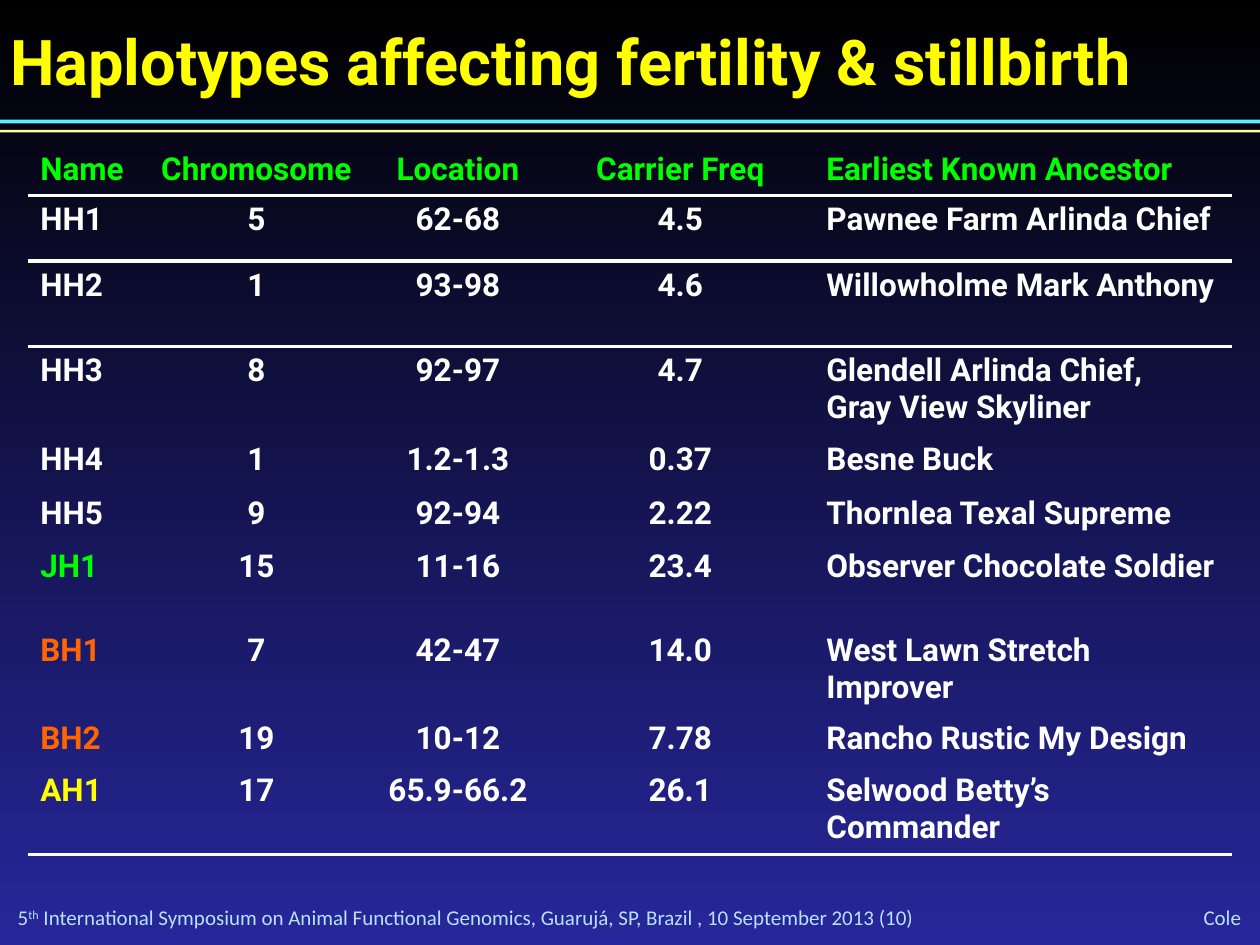
from lxml import etree
from pptx import Presentation
from pptx.dml.color import RGBColor
from pptx.enum import shapes, text
from pptx.oxml.ns import qn
from pptx.util import Inches, Pt

WHITE, GREEN, ORANGE, YELLOW, PALE_BLUE = "FFFFFF", "00FF00", "FF6600", "FFFF00", "B8E2FF"
NO_GRID_STYLE = "{2D5ABB26-0587-4C30-8999-92F81FD0307C}"


def color(hex_string):
    return RGBColor.from_string(hex_string)


def add_run(paragraph, words, size, font, hex_string, bold=False):
    run = paragraph.add_run()
    run.text = words
    run.font.size = Pt(size)
    run.font.name = font
    run.font.bold = bold
    run.font.color.rgb = color(hex_string)
    return run


presentation = Presentation()
presentation.slide_width, presentation.slide_height = Inches(10), Inches(7.5)
slide = presentation.slides.add_slide(presentation.slide_layouts[5])

# Background gradient, black at the top
background = slide.background.fill
background.gradient()
background.gradient_angle = 270
for stop, position, hex_string in zip(background.gradient_stops, (0, 1), ("000000", "27279B")):
    stop.position = position
    stop.color.rgb = color(hex_string)

# Rules under the title
for top, height, hex_string in ((0.95, 0.03, "5BEFFF"), (1.03, 0.02, "FFFF99")):
    rule = slide.shapes.add_shape(
        shapes.MSO_SHAPE.RECTANGLE, 0, Inches(top), Inches(10), Inches(height))
    rule.shadow.inherit = False
    rule.fill.solid()
    rule.fill.fore_color.rgb = color(hex_string)
    rule.line.fill.background()

# Footer: symposium on the left, speaker on the right
symposium = [("5", None), ("th", "30000"),
             (" International Symposium on Animal Functional Genomics, Guarujá, SP, Brazil"
              " , 10 September 2013 (10)", None)]
footers = [(0.14, 7.18, 8.81, 0.2, text.PP_ALIGN.LEFT, symposium),
           (8.72, 7.17, 1.13, 0.21, text.PP_ALIGN.RIGHT, [("Cole", None)])]
for left, top, width, height, alignment, pieces in footers:
    footer = slide.shapes.add_textbox(Inches(left), Inches(top), Inches(width), Inches(height))
    frame = footer.text_frame
    frame.word_wrap = True
    frame.vertical_anchor = text.MSO_ANCHOR.MIDDLE
    frame.margin_left = frame.margin_right = frame.margin_top = frame.margin_bottom = 0
    paragraph = frame.paragraphs[0]
    paragraph.alignment = alignment
    for words, baseline in pieces:
        run = add_run(paragraph, words, 12, "Calibri", PALE_BLUE)
        if baseline:
            run.font._element.set("baseline", baseline)

# Title
title = slide.shapes.title
title.left, title.top, title.width, title.height = map(Inches, (0.08, 0.18, 9.8, 0.61))
frame = title.text_frame
frame.auto_size = text.MSO_AUTO_SIZE.NONE
frame.vertical_anchor = text.MSO_ANCHOR.TOP
frame.margin_left = frame.margin_right = frame.margin_top = frame.margin_bottom = 0
frame.paragraphs[0].alignment = text.PP_ALIGN.LEFT
add_run(frame.paragraphs[0], "Haplotypes affecting fertility & stillbirth", 36, "Roboto", YELLOW, True)

# Haplotype table
rows = [
    ("Name", "Chromosome", "Location", "Carrier Freq", "Earliest Known Ancestor"),
    ("HH1", "5", "62-68", "4.5", "Pawnee Farm Arlinda Chief"),
    ("HH2", "1", "93-98", "4.6", "Willowholme Mark Anthony"),
    ("HH3", "8", "92-97", "4.7", "Glendell Arlinda Chief,\nGray View Skyliner"),
    ("HH4", "1", "1.2-1.3", "0.37", "Besne Buck"),
    ("HH5", "9", "92-94", "2.22", "Thornlea Texal Supreme"),
    ("JH1", "15", "11-16", "23.4", "Observer Chocolate Soldier"),
    ("BH1", "7", "42-47", "14.0", "West Lawn Stretch Improver"),
    ("BH2", "19", "10-12", "7.78", "Rancho Rustic My Design"),
    ("AH1", "17", "65.9-66.2", "26.1", "Selwood Betty’s Commander"),
]
column_widths = (0.92, 1.79, 1.41, 2.12, 3.32)
row_heights = (0.37, 0.52, 0.68, 0.67, 0.43, 0.42, 0.67, 0.68, 0.41, 0.52)
breed_colors = {"H": WHITE, "J": GREEN, "B": ORANGE, "A": YELLOW}
ruled_rows = (0, 1, len(rows) - 1)

table = slide.shapes.add_table(
    len(rows), len(column_widths), Inches(0.22), Inches(1.15),
    Inches(sum(column_widths)), Inches(sum(row_heights))).table
table.first_row = table.horz_banding = False
table._tbl.tblPr.find(qn("a:tableStyleId")).text = NO_GRID_STYLE
for column, width in zip(table.columns, column_widths):
    column.width = Inches(width)

for row_index, (values, height) in enumerate(zip(rows, row_heights)):
    table.rows[row_index].height = Inches(height)
    for column_index, value in enumerate(values):
        cell = table.cell(row_index, column_index)
        # White line below the ruled rows, shared with the row that follows
        edges = [("a:lnT", row_index - 1), ("a:lnB", row_index)]
        for edge, line_row in edges:
            if line_row in ruled_rows:
                border = etree.SubElement(
                    cell._tc.get_or_add_tcPr(), qn(edge), w=str(Pt(2.25)))
                fill = etree.SubElement(border, qn("a:solidFill"))
                etree.SubElement(fill, qn("a:srgbClr"), val=WHITE)
        cell.fill.background()

        if row_index == 0:
            text_color = GREEN
        elif column_index == 0:
            text_color = breed_colors[value[0]]
        else:
            text_color = WHITE
        for line_index, words in enumerate(value.split("\n")):
            frame = cell.text_frame
            paragraph = frame.add_paragraph() if line_index else frame.paragraphs[0]
            if column_index in (1, 2, 3):
                paragraph.alignment = text.PP_ALIGN.CENTER
            add_run(paragraph, words, 18, "Roboto", text_color, True)

presentation.save("out.pptx")
